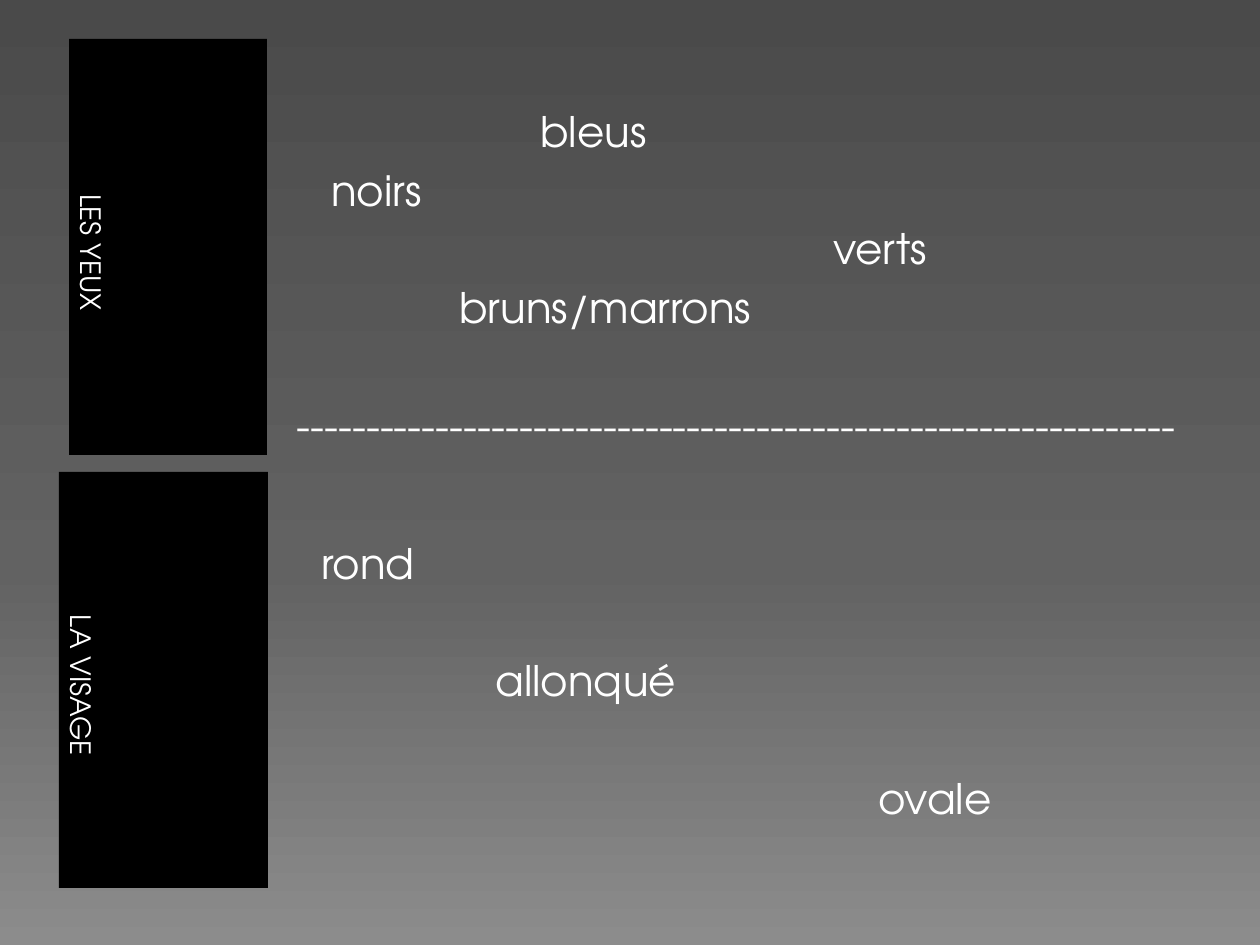
from copy import deepcopy

from pptx import Presentation
from pptx.dml.color import RGBColor
from pptx.enum.shapes import MSO_SHAPE
from pptx.enum.text import MSO_ANCHOR, PP_ALIGN
from pptx.oxml.ns import qn
from pptx.util import Pt

SCALE = 914400 // 126
FONT = "TeX Gyre Adventor"
WHITE = "FFFFFF"
BLACK = "000000"
BACKGROUND_STOPS = [(0, "4A4A4A"), (0.6, "626262"), (1, "8C8C8C")]
PARAGRAPH_GAP = 4.8
LINE_PITCH = 33.5

LABELS = [
    ("LES YEUX", (69, 39, 198, 416)),
    ("LA VISAGE", (59, 472, 209, 416)),
]
EYE_WORDS = [
    ("bleus", 250, 0),
    ("noirs", 41, 0),
    ("verts", 543, 0),
    ("bruns/marrons", 169, 0),
    ("-" * 63, 6, 1),
]
FACE_WORDS = [("rond", 31, 0), ("allonqué", 205, 1), ("ovale", 588, 1)]


def px(length):
    return length * SCALE


def color(code):
    return RGBColor.from_string(code)


def style_font(font, size):
    font.name = FONT
    font.size = Pt(size)
    font.color.rgb = color(WHITE)


def paint_background(page):
    fill = page.background.fill
    fill.gradient()
    fill.gradient_angle = 270
    stop_list = next(page.element.iter(qn("a:gsLst")))
    stop_list.insert(1, deepcopy(stop_list[0]))
    for stop, (position, code) in zip(fill.gradient_stops, BACKGROUND_STOPS):
        stop.position = position
        stop.color.rgb = color(code)


def add_vertical_label(page, text, bounds):
    box = page.shapes.add_shape(MSO_SHAPE.RECTANGLE, *map(px, bounds))
    box.shadow.inherit = False
    box.fill.solid()
    box.fill.fore_color.rgb = color(BLACK)
    box.line.fill.background()
    frame = box.text_frame
    frame.word_wrap = True
    frame.vertical_anchor = MSO_ANCHOR.BOTTOM
    frame.margin_bottom = px(2)
    next(box.element.iter(qn("a:bodyPr"))).set("vert", "vert")
    para = frame.paragraphs[0]
    para.text = text
    para.alignment = PP_ALIGN.CENTER
    style_font(para.font, 16)


def add_word_list(page, words, bounds):
    box = page.shapes.add_textbox(*map(px, bounds))
    frame = box.text_frame
    frame.word_wrap = True
    for index, (text, indent, skipped_lines) in enumerate(words):
        para = frame.add_paragraph() if index else frame.paragraphs[0]
        para.text = text
        para.space_before = Pt(PARAGRAPH_GAP + skipped_lines * LINE_PITCH)
        style_font(para.font, 24)
        *_, properties = box.element.iter(qn("a:pPr"))
        properties.set("marL", str(px(indent)))


def main():
    deck = Presentation()
    deck.slide_width, deck.slide_height = px(1260), px(945)
    page = deck.slides.add_slide(deck.slide_layouts[6])
    paint_background(page)
    for text, bounds in LABELS:
        add_vertical_label(page, text, bounds)
    add_word_list(page, EYE_WORDS, (278, 99, 945, 383))
    add_word_list(page, FACE_WORDS, (278, 531, 945, 357))
    deck.save("out.pptx")


if __name__ == "__main__":
    main()
